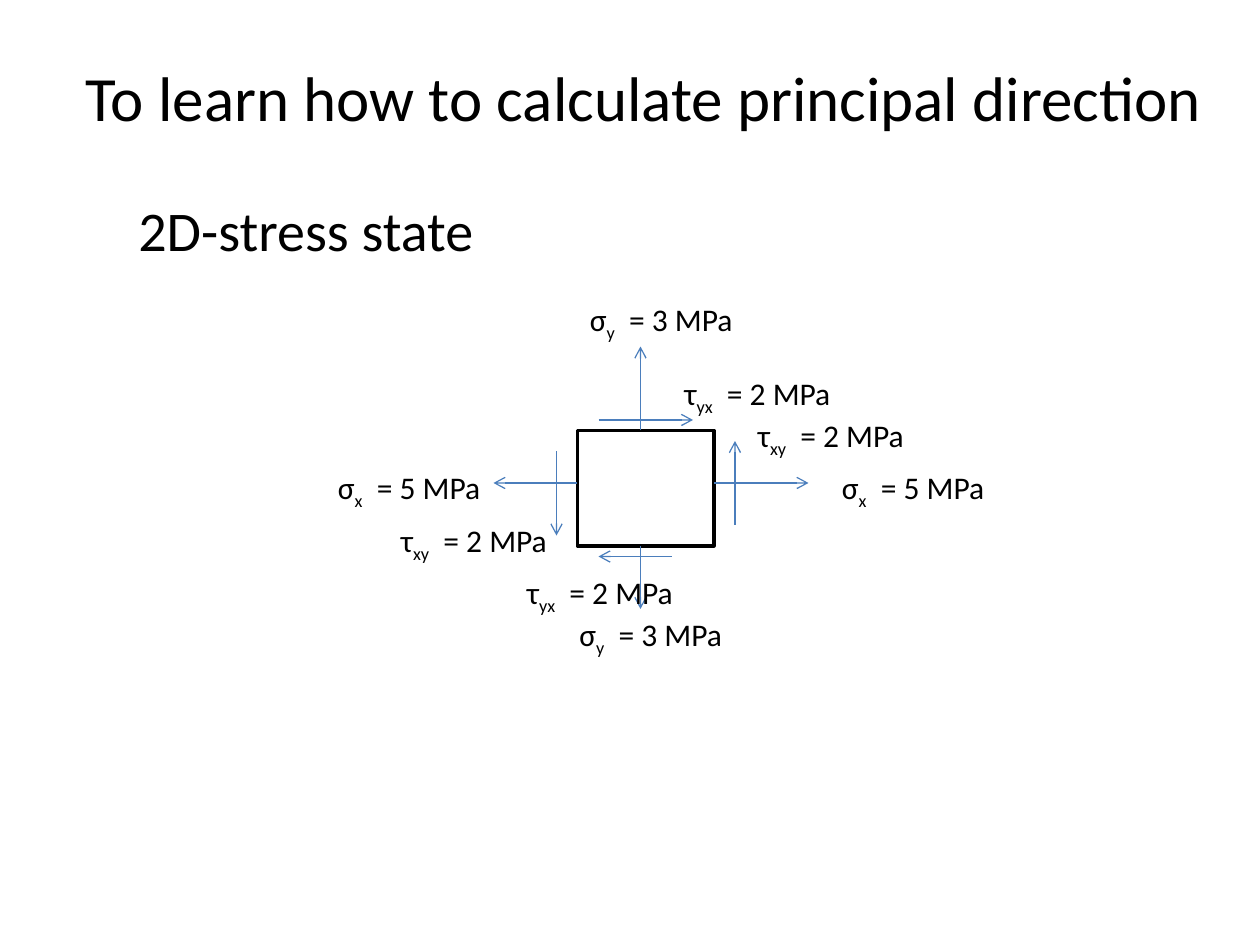
from dataclasses import dataclass

import pptx
import pptx.dml.color
import pptx.enum.shapes
import pptx.enum.text
import pptx.oxml
import pptx.oxml.ns
import pptx.util


@dataclass(frozen=True)
class Theme:
    font: str = "Calibri"
    ink: str = "000000"
    paper: str = "FFFFFF"
    blue: str = "4B7EBC"
    title: int = 36
    head: int = 32
    label: int = 18
    frame: float = 2
    thin: float = 0.75


@dataclass(frozen=True)
class Stress:
    sign: str
    axis: str
    value: int
    label: tuple[float, float]
    start: tuple[float, float]
    end: tuple[float, float]


THEME = Theme()
COLS, ROWS = 120, 90
WIDE, HIGH = pptx.util.Inches(10), pptx.util.Inches(7.5)
BOX = (55, 41, 13, 11)
LEFT, TOP = BOX[:2]
RIGHT, BASE = LEFT + BOX[2], TOP + BOX[3]
MID_X, MID_Y = 61, 46

STRESSES = [
    Stress("σ", "x", 5, (79, 44), (RIGHT, MID_Y), (77, MID_Y)),
    Stress("σ", "y", 3, (55, 28), (MID_X, TOP), (MID_X, 33)),
    Stress("σ", "y", 3, (54, 58), (MID_X, BASE), (MID_X, 58)),
    Stress("σ", "x", 5, (31, 44), (LEFT, MID_Y), (47, MID_Y)),
    Stress("τ", "xy", 2, (71, 39), (RIGHT + 2, 50), (RIGHT + 2, 42)),
    Stress("τ", "yx", 2, (64, 35), (57, TOP - 1), (66, TOP - 1)),
    Stress("τ", "yx", 2, (49, 54), (64, BASE + 1), (57, BASE + 1)),
    Stress("τ", "xy", 2, (37, 49), (LEFT - 2, 43), (LEFT - 2, 51)),
]


def col(n: float) -> int:
    return round(WIDE * n / COLS)


def row(n: float) -> int:
    return round(HIGH * n / ROWS)


def rgb(code: str) -> pptx.dml.color.RGBColor:
    return pptx.dml.color.RGBColor.from_string(code)


def write(slide, *parts: str, at: tuple, size: int, sub: int = -1) -> None:
    x, y, w, h = at
    frame = slide.shapes.add_textbox(col(x), row(y), col(w), row(h)).text_frame
    frame.word_wrap = False
    frame.auto_size = pptx.enum.text.MSO_AUTO_SIZE.SHAPE_TO_FIT_TEXT
    for i, part in enumerate(parts):
        run = frame.paragraphs[0].add_run()
        run.text = part
        run.font.name = THEME.font
        run.font.size = pptx.util.Pt(size)
        run.font.color.rgb = rgb(THEME.ink)
        if i == sub:
            run.font._element.set("baseline", "-25000")


def arrow(slide, start: tuple[float, float], end: tuple[float, float]) -> None:
    kind = pptx.enum.shapes.MSO_CONNECTOR.STRAIGHT
    line = slide.shapes.add_connector(
        kind, col(start[0]), row(start[1]), col(end[0]), row(end[1])
    )
    line.line.color.rgb = rgb(THEME.blue)
    line.line.width = pptx.util.Pt(THEME.thin)
    space = pptx.oxml.ns.nsdecls("a")
    tip = pptx.oxml.parse_xml(f'<a:tailEnd {space} type="arrow"/>')
    line.line._get_or_add_ln().append(tip)
    line._element.spPr.append(pptx.oxml.parse_xml(f"<a:effectLst {space}/>"))


def block(slide) -> None:
    x, y, w, h = BOX
    kind = pptx.enum.shapes.MSO_SHAPE.RECTANGLE
    shape = slide.shapes.add_shape(kind, col(x), row(y), col(w), row(h))
    shape.shadow.inherit = False
    shape.fill.solid()
    shape.fill.fore_color.rgb = rgb(THEME.paper)
    shape.line.color.rgb = rgb(THEME.ink)
    shape.line.width = pptx.util.Pt(THEME.frame)


def draw(slide, item: Stress) -> None:
    arrow(slide, item.start, item.end)
    wide = 16.3 if len(item.axis) == 1 else 16.8
    write(slide, item.sign, item.axis, f"  = {item.value} MPa",
          at=(*item.label, wide, 4.8), size=THEME.label, sub=1)


def main() -> None:
    deck = pptx.Presentation()
    deck.slide_width, deck.slide_height = WIDE, HIGH
    slide = deck.slides.add_slide(deck.slide_layouts[6])
    write(slide, "To learn how to calculate principal direction",
          at=(7, 5, 109.5, 8.5), size=THEME.title)
    write(slide, "2D-stress state", at=(12, 18, 34.7, 7.7), size=THEME.head)
    block(slide)
    for item in STRESSES:
        draw(slide, item)
    deck.save("out.pptx")


if __name__ == "__main__":
    main()
